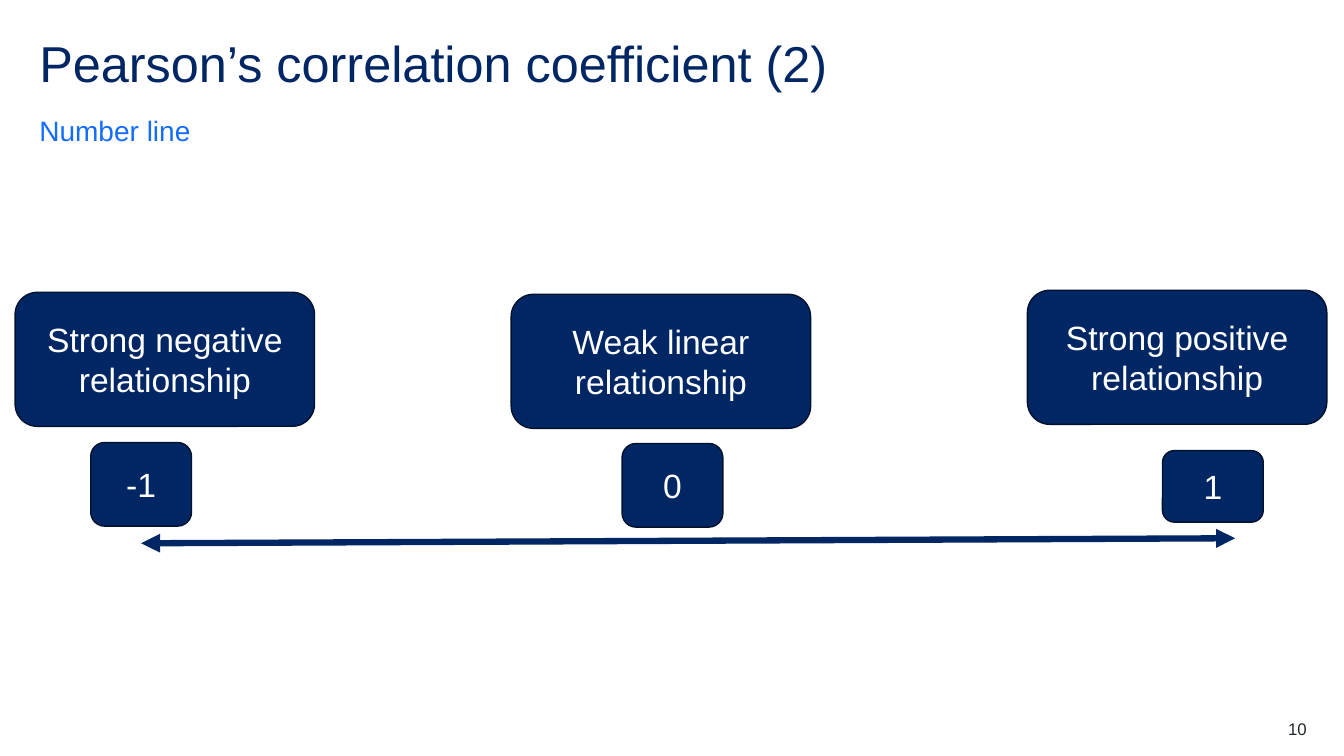
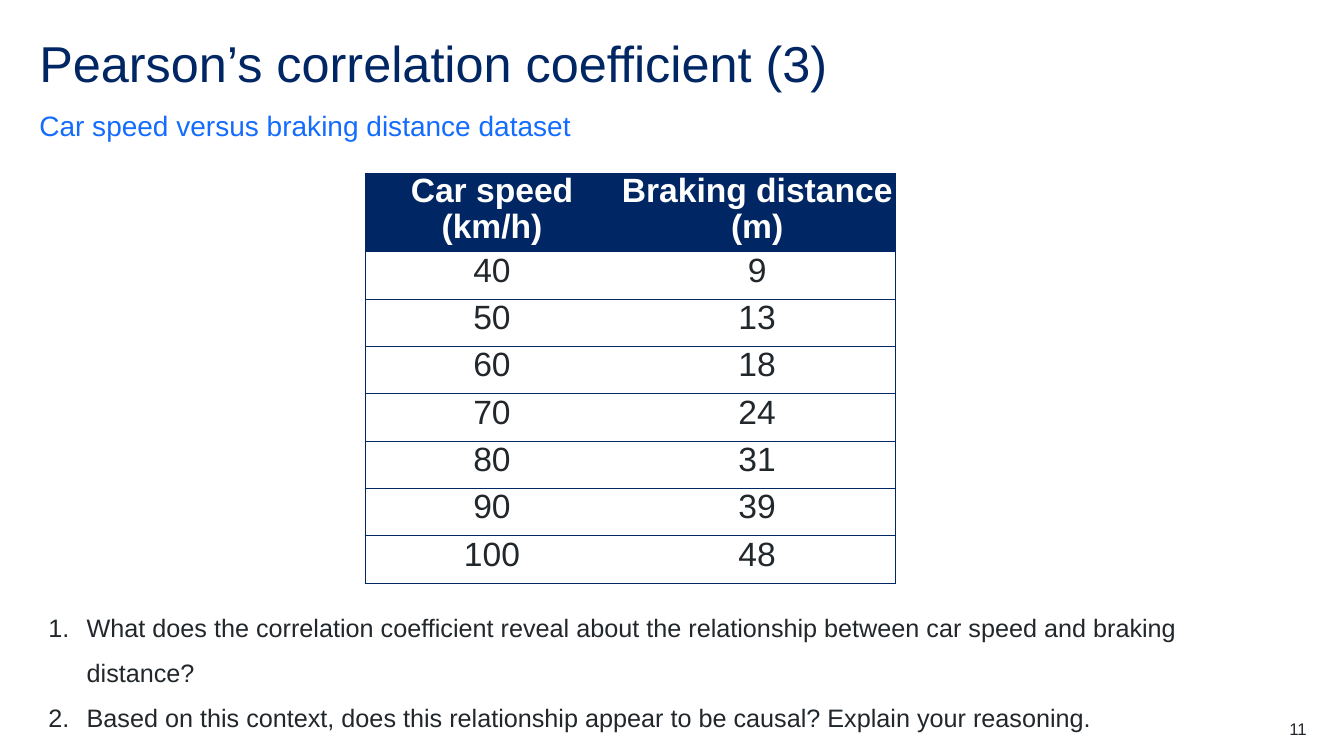
from dataclasses import dataclass

from lxml import etree
from pptx import Presentation
from pptx.dml.color import RGBColor
from pptx.enum.shapes import MSO_CONNECTOR, MSO_SHAPE
from pptx.enum.text import MSO_ANCHOR, PP_ALIGN
from pptx.oxml.ns import qn
from pptx.util import Inches, Pt

LEFT, CENTER, RIGHT = PP_ALIGN.LEFT, PP_ALIGN.CENTER, PP_ALIGN.RIGHT
TOP, MIDDLE, BOTTOM = MSO_ANCHOR.TOP, MSO_ANCHOR.MIDDLE, MSO_ANCHOR.BOTTOM
ROUNDED = MSO_SHAPE.ROUNDED_RECTANGLE
STRAIGHT = MSO_CONNECTOR.STRAIGHT
BLANK_LAYOUT = 6


@dataclass(frozen=True)
class Theme:
    font: str = "Arial"
    navy: str = "002664"
    blue: str = "146CFD"
    outline: str = "00112C"
    ink: str = "22272B"
    white: str = "FFFFFF"
    title_size: int = 36
    subtitle_size: int = 20
    large_size: int = 24
    body_size: int = 18
    number_size: int = 12


THEME = Theme()


def color(value):
    return RGBColor.from_string(value)


def write(frame, *lines, size, ink, bold=False, align=LEFT, spacing=None,
          after=None, numbered=False):
    for index, line in enumerate(lines):
        paragraph = frame.add_paragraph() if index else frame.paragraphs[0]
        paragraph.alignment = align
        if spacing:
            paragraph.line_spacing = spacing
        if after:
            paragraph.space_after = Pt(after)
        if numbered:
            properties = paragraph._p.get_or_add_pPr()
            properties.set("marL", str(Inches(0.38)))
            properties.set("indent", str(-Inches(0.38)))
            etree.SubElement(properties, qn("a:buFont"), typeface="+mj-lt")
            etree.SubElement(properties, qn("a:buAutoNum"), type="arabicPeriod")
        run = paragraph.add_run()
        run.text = line
        run.font.name = THEME.font
        run.font.size = Pt(size)
        run.font.bold = bold
        run.font.color.rgb = color(ink)


def set_border(cell, index, side, visible):
    line = etree.Element(qn(f"a:ln{side}"), w=str(Pt(0.5)))
    if visible:
        fill = etree.SubElement(line, qn("a:solidFill"))
        etree.SubElement(fill, qn("a:srgbClr"), val=THEME.navy)
    else:
        etree.SubElement(line, qn("a:noFill"))
    cell._tc.get_or_add_tcPr().insert(index, line)


class Deck:
    def __init__(self):
        self.presentation = Presentation()
        self.presentation.slide_width = Inches(13.33)
        self.presentation.slide_height = Inches(7.5)
        self.slide = None

    def add_slide(self, title, subtitle, number, subtitle_height):
        layout = self.presentation.slide_layouts[BLANK_LAYOUT]
        self.slide = self.presentation.slides.add_slide(layout)
        self.text((0.39, 0.39, 12.56, 0.6), title, size=THEME.title_size,
                  ink=THEME.navy, spacing=0.9)
        self.text((0.39, 1.07, 12.56, subtitle_height), subtitle, anchor=BOTTOM,
                  size=THEME.subtitle_size, ink=THEME.blue, spacing=1.5, after=12)
        self.text((12.17, 7.13, 0.79, 0.2), str(number), size=THEME.number_size,
                  ink=THEME.ink, align=RIGHT)

    def text(self, box, *lines, anchor=TOP, **style):
        frame = self.slide.shapes.add_textbox(*map(Inches, box)).text_frame
        frame.word_wrap = True
        frame.vertical_anchor = anchor
        frame.margin_left = frame.margin_right = 0
        frame.margin_top = frame.margin_bottom = 0
        write(frame, *lines, **style)

    def card(self, box, label):
        shape = self.slide.shapes.add_shape(ROUNDED, *map(Inches, box))
        shape.shadow.inherit = False
        shape.fill.solid()
        shape.fill.fore_color.rgb = color(THEME.navy)
        shape.line.color.rgb = color(THEME.outline)
        shape.line.width = Pt(1)
        shape.text_frame.word_wrap = True
        shape.text_frame.vertical_anchor = MIDDLE
        write(shape.text_frame, label, size=THEME.large_size, ink=THEME.white,
              align=CENTER)

    def double_arrow(self, start, end):
        connector = self.slide.shapes.add_connector(
            STRAIGHT, *map(Inches, start + end))
        connector.line.color.rgb = color(THEME.navy)
        connector.line.width = Pt(4.5)
        line = connector.line._get_or_add_ln()
        for name in ("a:headEnd", "a:tailEnd"):
            etree.SubElement(line, qn(name), type="triangle")
        etree.SubElement(connector._element.spPr, qn("a:effectLst"))

    def table(self, left, top, widths, heights, rows):
        box = map(Inches, (left, top, sum(widths), sum(heights)))
        table = self.slide.shapes.add_table(len(rows), len(widths), *box).table
        table.horz_banding = False
        for column, width in zip(table.columns, widths):
            column.width = Inches(width)
        for row, height in zip(table.rows, heights):
            row.height = Inches(height)
        for row_index, values in enumerate(rows):
            for column_index, value in enumerate(values):
                self.fill_cell(table.cell(row_index, column_index), str(value),
                               header=row_index == 0, first=column_index == 0,
                               last=column_index == len(widths) - 1)

    def fill_cell(self, cell, value, header, first, last):
        cell.margin_left = cell.margin_right = 0
        cell.margin_top = cell.margin_bottom = 0
        cell.fill.solid()
        cell.fill.fore_color.rgb = color(THEME.navy if header else THEME.white)
        sides = {"L": first, "R": last, "T": True, "B": True}
        for index, (side, visible) in enumerate(sides.items()):
            set_border(cell, index, side, visible)
        write(cell.text_frame, value, size=THEME.large_size, bold=header,
              ink=THEME.white if header else THEME.ink, align=CENTER,
              spacing=0.97 if header else None)


def add_number_line(deck):
    deck.add_slide("Pearson’s correlation coefficient (2)", "Number line", 10, 0.39)
    meanings = [
        (0.15, 2.9, "Strong negative relationship"),
        (5.07, 2.92, "Weak linear relationship"),
        (10.19, 2.88, "Strong positive relationship"),
    ]
    for left, top, label in meanings:
        deck.card((left, top, 2.97, 1.33), label)
    values = [(0.9, 4.39, 0.83, "-1"), (6.17, 4.4, 0.83, "0"), (11.53, 4.47, 0.71, "1")]
    for left, top, height, label in values:
        deck.card((left, top, 1, height), label)
    deck.double_arrow((1.4, 5.39), (12.25, 5.34))


def add_braking_data(deck):
    deck.add_slide("Pearson’s correlation coefficient (3)",
                   "Car speed versus braking distance dataset", 11, 0.34)
    speeds = range(40, 101, 10)
    distances = [9, 13, 18, 24, 31, 39, 48]
    rows = [("Car speed (km/h)", "Braking distance (m)"), *zip(speeds, distances)]
    deck.table(3.62, 1.72, [2.52, 2.74], [0.74] + [0.47] * len(distances), rows)
    deck.text(
        (0.48, 5.92, 12.17, 1.32),
        "What does the correlation coefficient reveal about the relationship "
        "between car speed and braking distance?",
        "Based on this context, does this relationship appear to be causal? "
        "Explain your reasoning.",
        size=THEME.body_size, ink=THEME.ink, spacing=1.5, numbered=True)


def main():
    deck = Deck()
    add_number_line(deck)
    add_braking_data(deck)
    deck.presentation.save("out.pptx")


if __name__ == "__main__":
    main()
